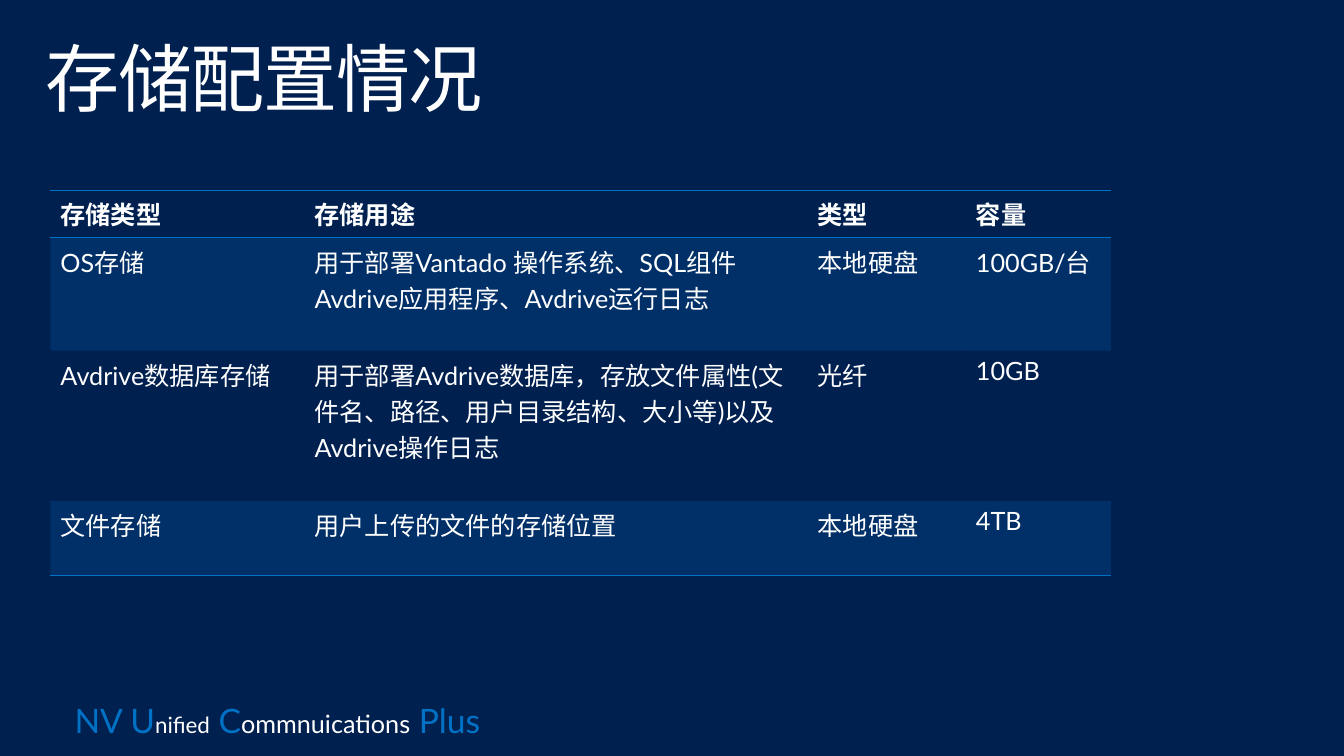
from lxml.etree import SubElement
from pptx import Presentation
from pptx.dml.color import RGBColor
from pptx.oxml import parse_xml
from pptx.oxml.ns import nsdecls, qn
from pptx.util import Inches, Pt

FONT = "Lato"
NAVY, BLUE, WHITE = "002050", "0072C6", "FFFFFF"
NO_STYLE = "{2D5ABB26-0587-4C30-8999-92F81FD0307C}"

COLUMN_WIDTHS = [2.52, 4.99, 1.57, 1.44]
ROW_HEIGHTS = [0.47, 1.12, 1.49, 0.74]
STORAGE_ROWS = [
    ["存储类型", "存储用途", "类型", "容量"],
    ["OS存储", "用于部署Vantado 操作系统、SQL组件\nAvdrive应用程序、Avdrive运行日志",
     "本地硬盘", "100GB/台"],
    ["Avdrive数据库存储",
     "用于部署Avdrive数据库，存放文件属性(文件名、路径、用户目录结构、大小等)以及Avdrive操作日志",
     "光纤", "10GB"],
    ["文件存储", "用户上传的文件的存储位置", "本地硬盘", "4TB"],
]
FOOTER_SPANS = [
    ("NV U", 24, BLUE), ("nified", 16, WHITE), (" ", 24, WHITE),
    ("C", 24, BLUE), ("ommnuications", 18, WHITE), (" ", 24, WHITE), ("Plus", 24, BLUE),
]


def color(value):
    return RGBColor.from_string(value)


def add_span(para, text, size, fill, bold=False):
    span = para.add_run()
    span.text = text
    span.font.name = FONT
    span.font.size = Pt(size)
    span.font.bold = bold
    span.font.color.rgb = color(fill)
    return span


def add_text_box(page, left, top, width, height, inset_x, inset_y):
    """Add a wrapped text box and return its first paragraph."""
    box = page.shapes.add_textbox(Inches(left), Inches(top), Inches(width), Inches(height))
    frame = box.text_frame
    frame.word_wrap = True
    frame.margin_left = frame.margin_right = Inches(inset_x)
    frame.margin_top = frame.margin_bottom = Inches(inset_y)
    para = frame.paragraphs[0]
    para.line_spacing = 0.9
    return para


def set_borders(cell, sides):
    properties = cell._tc.get_or_add_tcPr()
    for index, side in enumerate(sides):
        properties.insert(index, parse_xml(
            f'<a:ln{side} {nsdecls("a")} w="12700"><a:solidFill>'
            f'<a:srgbClr val="{BLUE}"/></a:solidFill></a:ln{side}>'))


def set_tint(cell, percent):
    """Fill a cell with see-through blue."""
    cell.fill.solid()
    cell.fill.fore_color.rgb = color(BLUE)
    tone = cell._tc.tcPr.find(".//" + qn("a:srgbClr"))
    SubElement(tone, qn("a:alpha")).set("val", str(percent * 1000))


def fill_cell(cell, text, row):
    for index, line in enumerate(text.split("\n")):
        frame = cell.text_frame
        para = frame.add_paragraph() if index else frame.paragraphs[0]
        add_span(para, line, 18, WHITE, bold=row == 0)
    if row % 2:
        set_tint(cell, 20)
    else:
        cell.fill.background()
    if row == 0:
        set_borders(cell, "TB")
    elif row == len(STORAGE_ROWS) - 1:
        set_borders(cell, "B")


def add_storage_table(page):
    frame = page.shapes.add_table(
        len(ROW_HEIGHTS), len(COLUMN_WIDTHS), Inches(0.5), Inches(1.89),
        Inches(sum(COLUMN_WIDTHS)), Inches(sum(ROW_HEIGHTS)))
    table = frame.table
    table._tbl.tblPr.find(qn("a:tableStyleId")).text = NO_STYLE
    for column, width in zip(table.columns, COLUMN_WIDTHS):
        column.width = Inches(width)
    for row, height in zip(table.rows, ROW_HEIGHTS):
        row.height = Inches(height)
    for row, texts in enumerate(STORAGE_ROWS):
        for column, text in enumerate(texts):
            fill_cell(table.cell(row, column), text, row)


def main():
    deck = Presentation()
    deck.slide_width, deck.slide_height = Inches(13.33), Inches(7.5)
    page = deck.slides.add_slide(deck.slide_layouts[6])
    page.background.fill.solid()
    page.background.fill.fore_color.rgb = color(NAVY)

    # Footer line
    footer = add_text_box(page, 0.54, 6.83, 4.53, 0.69, 0.2, 0.16)
    footer.space_after = Pt(6)
    for text, size, fill in FOOTER_SPANS:
        add_span(footer, text, size, fill)

    # Title, slightly tightened
    title = add_text_box(page, 0.29, 0.32, 12.75, 0.98, 0.16, 0.1)
    heading = add_span(title, "存储配置情况", 52.9, WHITE)
    heading.font._element.set("spc", "-100")

    # Storage overview
    add_storage_table(page)
    deck.save("out.pptx")


if __name__ == "__main__":
    main()
